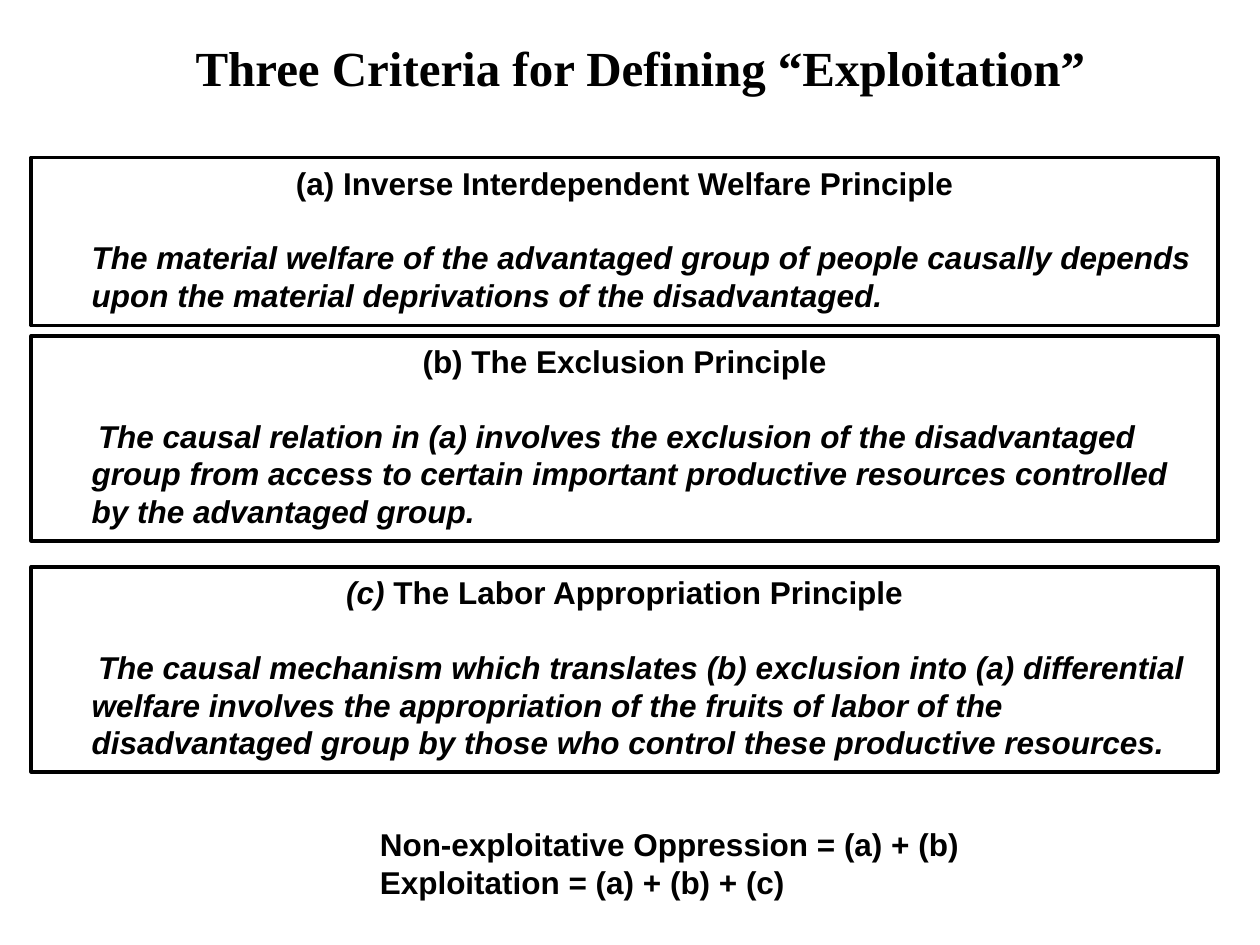
from dataclasses import dataclass

from pptx import Presentation
from pptx.dml.color import RGBColor
from pptx.enum import shapes, text
from pptx.util import Inches, Pt


@dataclass(frozen=True)
class Theme:
    ink: RGBColor = RGBColor(0, 0, 0)
    title_font: str = "Times New Roman"
    body_font: str = "Arial"
    title_size: int = 28
    body_size: int = 18
    line_width: float = 2.25
    body_gap: int = 21


THEME = Theme()
UNITS_PER_INCH = 12
TITLE_ONLY = 5
BODY_INDENT = 0.38
BOX_LEFT, BOX_WIDTH = 3, 113

CRITERIA = [
    (15, 16, 0, [("(a) Inverse Interdependent Welfare Principle", False)],
     "The material welfare of the advantaged group of people causally depends "
     "upon the material deprivations of the disadvantaged."),
    (32, 19.5, 0.05, [("(b) The Exclusion Principle", False)],
     "The causal relation in (a) involves the exclusion of the disadvantaged "
     "group from access to certain important productive resources controlled "
     "by the advantaged group."),
    (54, 19.5, 0.05, [("(c) ", True), ("The Labor Appropriation Principle", False)],
     "The causal mechanism which translates (b) exclusion into (a) differential "
     "welfare involves the appropriation of the fruits of labor of the "
     "disadvantaged group by those who control these productive resources."),
]
SUMMARY = [
    "Non-exploitative Oppression = (a) + (b)",
    "Exploitation = (a) + (b) + (c)",
]


def grid(*units):
    return [Inches(unit / UNITS_PER_INCH) for unit in units]


def apply(target, values):
    for name, value in values.items():
        setattr(target, name, value)


def prepare_frame(box):
    apply(box.text_frame, {
        "word_wrap": True,
        "auto_size": text.MSO_AUTO_SIZE.NONE,
        "vertical_anchor": text.MSO_ANCHOR.TOP,
    })
    return box.text_frame


def write(para, spans, align, font=THEME.body_font, size=THEME.body_size):
    para.alignment = align
    for words, italic in spans:
        span = para.add_run()
        span.text = words
        apply(span.font, {"name": font, "size": Pt(size), "bold": True, "italic": italic})
        span.font.color.rgb = THEME.ink


def add_title(page, words):
    title = page.shapes.title
    apply(title, dict(zip(("left", "top", "width", "height"), grid(8, 3, 106, 6.8))))
    para = prepare_frame(title).paragraphs[0]
    write(para, [(words, False)], text.PP_ALIGN.CENTER, THEME.title_font, THEME.title_size)


def add_criterion(page, top, height, first_line, heading, body):
    box = page.shapes.add_shape(
        shapes.MSO_SHAPE.RECTANGLE, *grid(BOX_LEFT, top, BOX_WIDTH, height))
    box.shadow.inherit = False
    box.fill.background()
    box.line.color.rgb = THEME.ink
    box.line.width = Pt(THEME.line_width)
    frame = prepare_frame(box)
    write(frame.paragraphs[0], heading, text.PP_ALIGN.CENTER)
    para = frame.add_paragraph()
    para.space_before = Pt(THEME.body_gap)
    write(para, [(body, True)], text.PP_ALIGN.LEFT)
    indents = para._p.get_or_add_pPr()
    indents.set("marL", str(Inches(BODY_INDENT)))
    indents.set("indent", str(Inches(first_line)))


def add_summary(page, lines):
    frame = prepare_frame(page.shapes.add_textbox(*grid(35, 78, 61, 8.4)))
    for index, words in enumerate(lines):
        para = frame.add_paragraph() if index else frame.paragraphs[0]
        write(para, [(words, False)], text.PP_ALIGN.LEFT)


def main():
    deck = Presentation()
    apply(deck, {"slide_width": Inches(10), "slide_height": Inches(7.5)})
    page = deck.slides.add_slide(deck.slide_layouts[TITLE_ONLY])
    add_title(page, "Three Criteria for Defining “Exploitation”")
    for criterion in CRITERIA:
        add_criterion(page, *criterion)
    add_summary(page, SUMMARY)
    deck.save("out.pptx")


if __name__ == "__main__":
    main()
